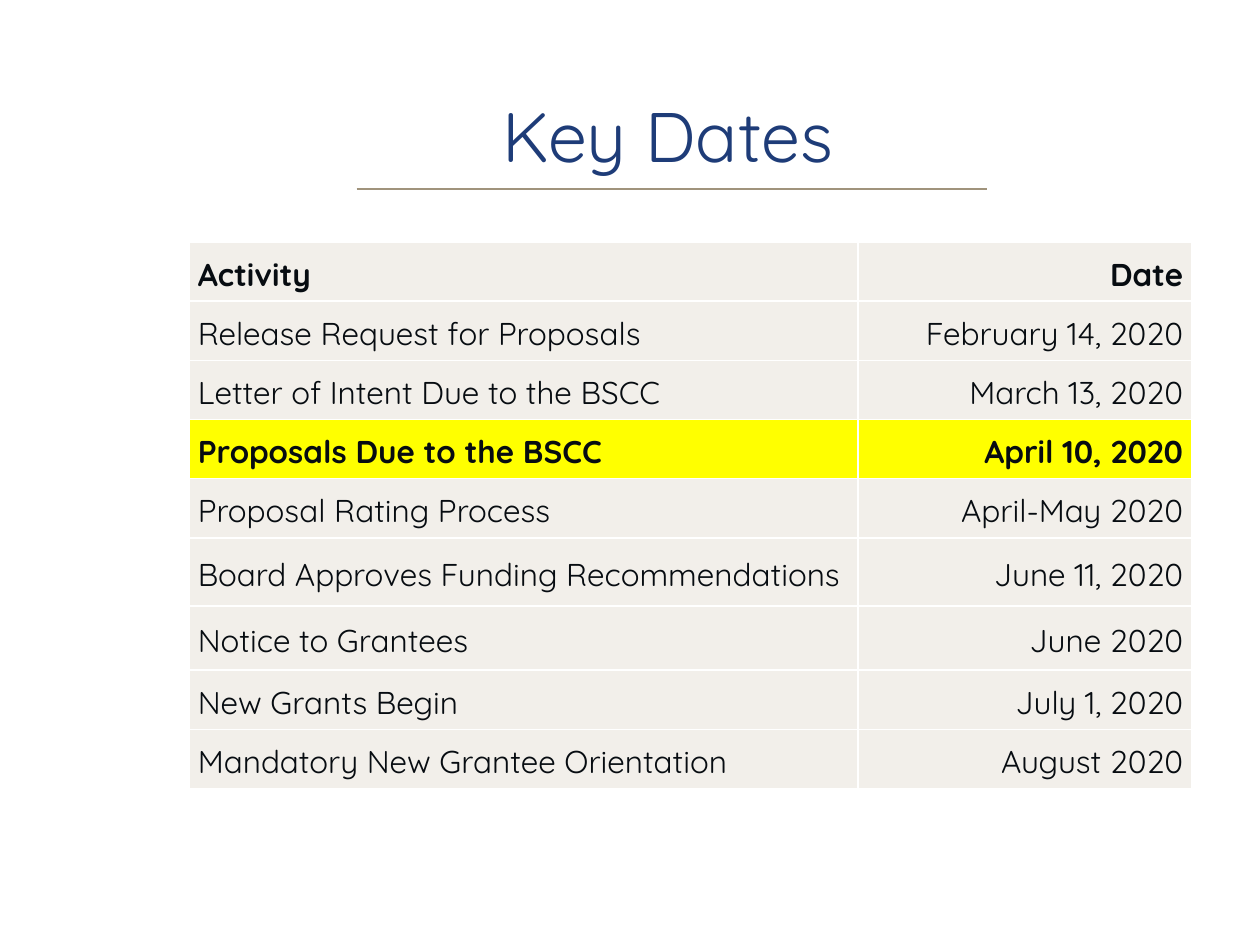
from dataclasses import dataclass

from lxml import etree
from pptx import Presentation
from pptx.dml.color import RGBColor
from pptx.enum.shapes import MSO_CONNECTOR
from pptx.enum.text import MSO_ANCHOR, PP_ALIGN
from pptx.oxml.ns import qn
from pptx.util import Inches, Pt

STRAIGHT = MSO_CONNECTOR.STRAIGHT
MIDDLE = MSO_ANCHOR.MIDDLE
LEFT, CENTER, RIGHT = PP_ALIGN.LEFT, PP_ALIGN.CENTER, PP_ALIGN.RIGHT
TITLE_ONLY_LAYOUT = 5


@dataclass(frozen=True)
class Theme:
    font: str = "Quicksand"
    title_size: int = 40
    table_size: int = 18
    title_color: str = "1E3C78"
    text_color: str = "070C11"
    rule_color: str = "A0937C"
    cell_fill: str = "F2EFEA"
    highlight_fill: str = "FFFF00"
    border_color: str = "FFFFFF"


THEME = Theme()

TABLE_LEFT, TABLE_TOP = 1.5, 1.92
COLUMN_WIDTHS = (5.31, 2.65)
ROW_HEIGHT = 0.47
TALLER_ROWS = {5: 0.54, 6: 0.51}
HEADER_ROW, DEADLINE_ROW = 0, 3

KEY_DATES = [
    ("Activity", "Date"),
    ("Release Request for Proposals", "February 14, 2020"),
    ("Letter of Intent Due to the BSCC", "March 13, 2020"),
    ("Proposals Due to the BSCC", "April 10, 2020"),
    ("Proposal Rating Process", "April-May 2020"),
    ("Board Approves Funding Recommendations", "June 11, 2020"),
    ("Notice to Grantees", "June 2020"),
    ("New Grants Begin", "July 1, 2020"),
    ("Mandatory New Grantee Orientation", "August 2020"),
]


def format_text(text_frame, size, color, alignment, bold=False):
    paragraph = text_frame.paragraphs[0]
    paragraph.alignment = alignment
    for run in paragraph.runs:
        run.font.name = THEME.font
        run.font.size = Pt(size)
        run.font.bold = bold
        run.font.color.rgb = RGBColor.from_string(color)
    return paragraph


def set_title(slide, text):
    title = slide.shapes.title
    title.left, title.top = Inches(0.58), Inches(0.67)
    title.width, title.height = Inches(9), Inches(0.8)
    text_frame = title.text_frame
    text_frame.text = text
    text_frame.vertical_anchor = MIDDLE
    text_frame.margin_top = text_frame.margin_bottom = 0
    paragraph = format_text(text_frame, THEME.title_size, THEME.title_color, CENTER)
    properties = paragraph._p.get_or_add_pPr()
    properties.set("marL", str(Inches(0.44)))
    properties.set("indent", "0")


def add_rule(slide, left, top, width):
    rule = slide.shapes.add_connector(
        STRAIGHT, Inches(left), Inches(top), Inches(left + width), Inches(top)
    )
    rule.line.color.rgb = RGBColor.from_string(THEME.rule_color)
    rule.line.width = Pt(0.75)
    etree.SubElement(rule._element.spPr, qn("a:effectLst"))


def add_borders(cell):
    properties = cell._tc.get_or_add_tcPr()
    for side in ("lnL", "lnR", "lnT", "lnB"):
        border = etree.SubElement(properties, qn(f"a:{side}"), w=str(Pt(1)))
        fill = etree.SubElement(border, qn("a:solidFill"))
        etree.SubElement(fill, qn("a:srgbClr"), val=THEME.border_color)


def fill_cell(cell, text, alignment, fill_color, bold):
    add_borders(cell)
    cell.fill.solid()
    cell.fill.fore_color.rgb = RGBColor.from_string(fill_color)
    cell.vertical_anchor = MIDDLE
    cell.margin_left = cell.margin_right = Inches(0.07)
    cell.margin_top = cell.margin_bottom = 0
    cell.text_frame.text = text
    paragraph = format_text(
        cell.text_frame, THEME.table_size, THEME.text_color, alignment, bold
    )
    paragraph.line_spacing = 1.15


def add_dates_table(slide, rows):
    heights = [TALLER_ROWS.get(index, ROW_HEIGHT) for index in range(len(rows))]
    table = slide.shapes.add_table(
        len(rows), len(COLUMN_WIDTHS), Inches(TABLE_LEFT), Inches(TABLE_TOP),
        Inches(sum(COLUMN_WIDTHS)), Inches(sum(heights)),
    ).table
    for column, width in zip(table.columns, COLUMN_WIDTHS):
        column.width = Inches(width)
    for index, (row, texts) in enumerate(zip(table.rows, rows)):
        row.height = Inches(heights[index])
        fill_color = THEME.highlight_fill if index == DEADLINE_ROW else THEME.cell_fill
        bold = index in (HEADER_ROW, DEADLINE_ROW)
        for cell, text, alignment in zip(row.cells, texts, (LEFT, RIGHT)):
            fill_cell(cell, text, alignment, fill_color, bold)


def main():
    presentation = Presentation()
    presentation.slide_width, presentation.slide_height = Inches(10), Inches(7.5)
    slide = presentation.slides.add_slide(presentation.slide_layouts[TITLE_ONLY_LAYOUT])
    set_title(slide, "Key Dates")
    add_rule(slide, left=2.83, top=1.5, width=5)
    add_dates_table(slide, KEY_DATES)
    presentation.save("out.pptx")


if __name__ == "__main__":
    main()
